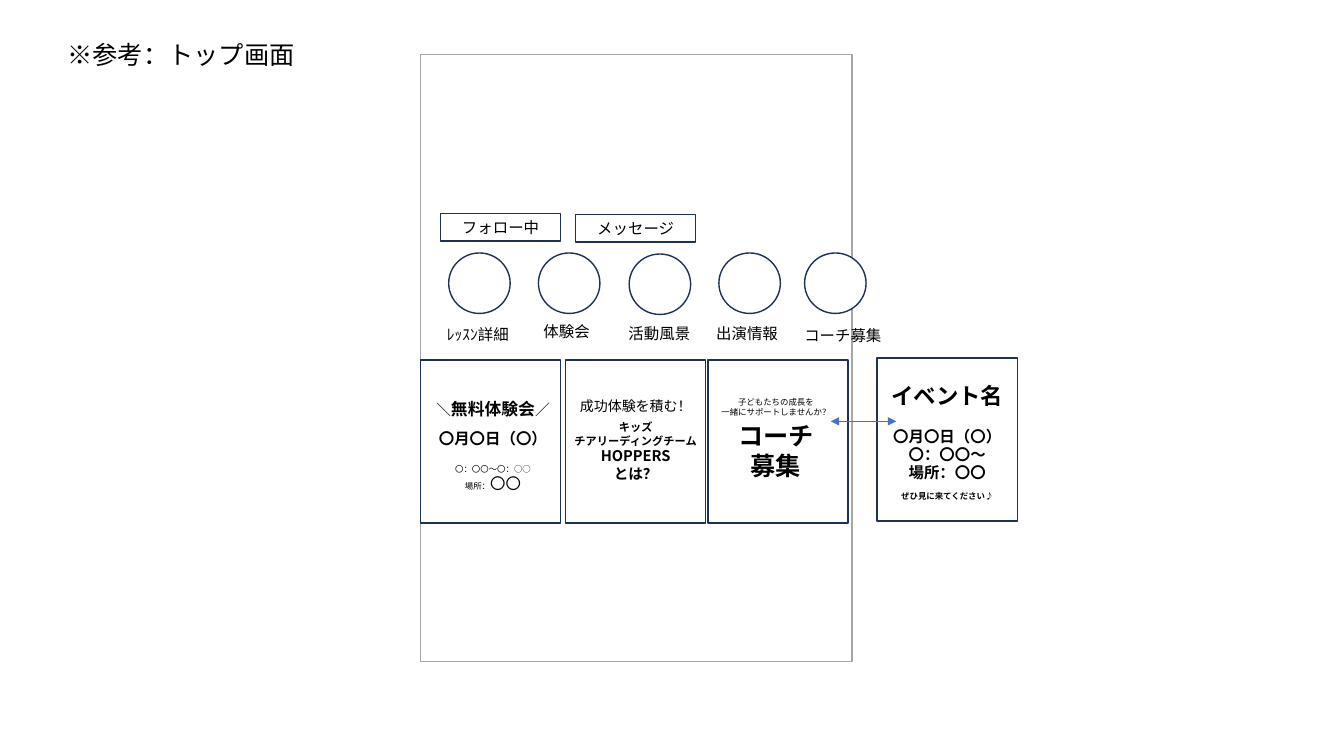
from lxml import etree
from pptx import Presentation
from pptx.dml.color import RGBColor
from pptx.enum import shapes, text
from pptx.oxml import ns
from pptx.util import Inches, Pt

FONT = "Noto Sans CJK JP"
NAVY = "1E3256"
LINE_RATIO = 1.19

HIGHLIGHTS = [
    ("ﾚｯｽﾝ詳細", 4.45, 2.51, 4.22, 3.16),
    ("体験会", 5.34, 2.51, 5.1, 3.13),
    ("活動風景", 6.24, 2.52, 6.02, 3.15),
    ("出演情報", 7.13, 2.51, 6.89, 3.15),
    ("コーチ募集", 7.98, 2.51, 7.84, 3.17),
]
BUTTONS = [("フォロー中", 4.37, 2.12), ("メッセージ", 5.71, 2.13)]
POSTS = [
    ((4.17, 3.57), (4.21, 3.89, 1.36, 1.23), [
        (0, [("＼", 10.5, False), ("無料体験会", 12, True), ("／", 10.5, False)]),
        (7, [("〇月〇日（〇）", 11, True)]),
        (12, [("〇：〇〇～〇：○○", 6, False)]),
        (0, [("場所：", 6, False), ("〇〇", 11, False)]),
    ]),
    ((5.61, 3.57), (5.48, 3.87, 1.65, 1.08), [
        (0, [("成功体験を積む！", 10, False)]),
        (5, [("キッズ", 8, True)]),
        (0, [("チアリーディングチーム", 8, True)]),
        (0, [("HOPPERS", 10.5, True)]),
        (0, [("とは？", 10.5, True)]),
    ]),
    ((7.02, 3.57), (6.84, 3.87, 1.71, 1.04), [
        (0, [("子どもたちの成長を", 6, False)]),
        (0, [("一緒にサポートしませんか？", 6, False)]),
        (2.5, [("コーチ", 18, True)]),
        (0, [("募集", 18, True)]),
    ]),
    ((8.7, 3.55), (8.54, 3.72, 1.71, 1.4), [
        (0, [("イベント名", 16, True)]),
        (13, [("〇月〇日（〇）", 11, True)]),
        (0, [("〇：〇〇～", 11, True)]),
        (0, [("場所：〇〇", 11, True)]),
        (7, [("ぜひ見に来てください♪", 6, True)]),
    ]),
]


def rgb(value):
    """Return the colour of a hex string."""
    return RGBColor.from_string(value)


def set_all(target, values):
    """Set each named attribute on the target."""
    for name, value in values.items():
        setattr(target, name, value)


def write(frame, paragraphs, align=text.PP_ALIGN.CENTER, **frame_format):
    """Fill a text frame with paragraphs of (space before, runs)."""
    set_all(frame, {"word_wrap": True, "auto_size": text.MSO_AUTO_SIZE.NONE,
                    "vertical_anchor": text.MSO_ANCHOR.TOP,
                    "margin_top": Inches(0.07), **frame_format})
    for index, (gap, runs) in enumerate(paragraphs):
        paragraph = frame.add_paragraph() if index else frame.paragraphs[0]
        tallest = max(size for _, size, _ in runs)
        set_all(paragraph, {"alignment": align, "space_before": Pt(gap),
                            "line_spacing": Pt(round(tallest * LINE_RATIO, 1))})
        for words, size, bold in runs:
            run = paragraph.add_run()
            run.text = words
            set_all(run.font, {"size": Pt(size), "bold": bold, "name": FONT})
            run.font.color.rgb = rgb("000000")
            east_asian = etree.SubElement(run.font._element, ns.qn("a:ea"))
            east_asian.set("typeface", FONT)


def outline(slide, kind, box, colour=NAVY):
    """Add a white shape with a thin outline."""
    shape = slide.shapes.add_shape(kind, *map(Inches, box))
    shape.shadow.inherit = False
    shape.fill.solid()
    shape.fill.fore_color.rgb = rgb("FFFFFF")
    shape.line.color.rgb = rgb(colour)
    shape.line.width = Pt(1)
    return shape


def caption(slide, box, paragraphs):
    """Add a centred text box."""
    write(slide.shapes.add_textbox(*map(Inches, box)).text_frame, paragraphs)


def double_arrow(slide, start, end, colour):
    """Add a thin straight line with an arrowhead at both ends."""
    arrow = slide.shapes.add_connector(
        shapes.MSO_CONNECTOR.STRAIGHT, *map(Inches, start + end))
    arrow.line.color.rgb = rgb(colour)
    arrow.line.width = Pt(0.5)
    for tag in ("a:headEnd", "a:tailEnd"):
        etree.SubElement(arrow.line._ln, ns.qn(tag)).set("type", "triangle")
    etree.SubElement(arrow._element.spPr, ns.qn("a:effectLst"))


def heading(slide, words):
    """Place and format the title placeholder."""
    title = slide.shapes.title
    set_all(title, {"left": Inches(0.57), "top": Inches(0.32),
                    "width": Inches(3.7), "height": Inches(0.4)})
    write(title.text_frame, [(0, [(words, 18, False)])], text.PP_ALIGN.LEFT)


def main():
    """Build the profile screen mock-up and save it."""
    deck = Presentation()
    set_all(deck, {"slide_width": Inches(13.33), "slide_height": Inches(7.5)})
    slide = deck.slides.add_slide(deck.slide_layouts[5])
    rectangle, circle = shapes.MSO_SHAPE.RECTANGLE, shapes.MSO_SHAPE.OVAL

    heading(slide, "※参考：トップ画面")
    outline(slide, rectangle, (4.17, 0.54, 4.28, 6.02), "A6A6A6")
    for words, left, top in BUTTONS:
        button = outline(slide, rectangle, (left, top, 1.19, 0.27))
        write(button.text_frame, [(0, [(words, 11, False)])],
              vertical_anchor=text.MSO_ANCHOR.MIDDLE, margin_top=Inches(0.05))
    for words, left, top, label_left, label_top in HIGHLIGHTS:
        outline(slide, circle, (left, top, 0.61, 0.6))
        caption(slide, (label_left, label_top, 1.04, 0.29), [(0, [(words, 11, False)])])
    for corner, _, _ in POSTS:
        outline(slide, rectangle, corner + (1.39, 1.62))
    for _, box, paragraphs in POSTS:
        caption(slide, box, paragraphs)
    double_arrow(slide, (8.24, 4.18), (8.89, 4.18), "4472C4")
    deck.save("out.pptx")


if __name__ == "__main__":
    main()
